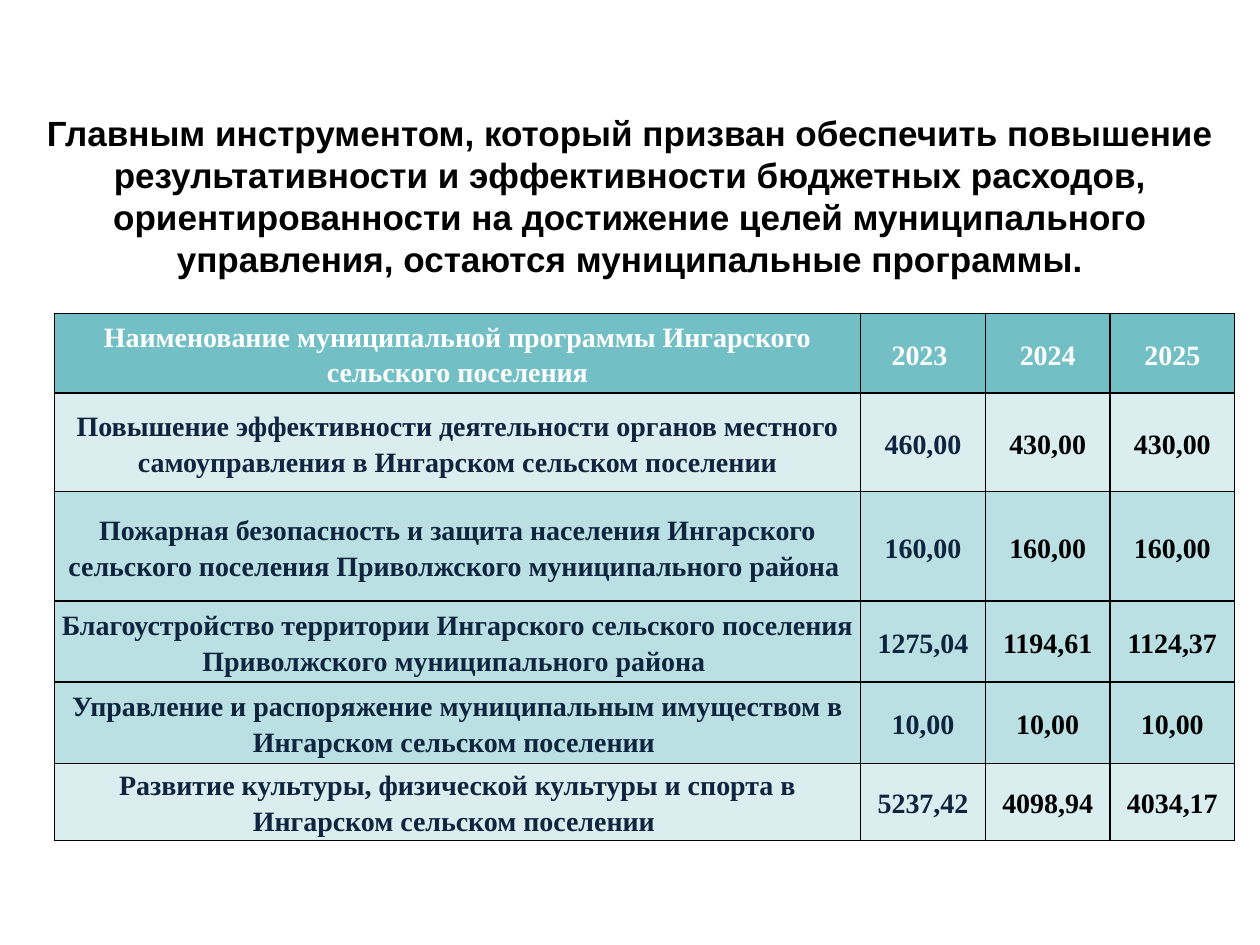
from dataclasses import dataclass

from lxml.etree import SubElement
from pptx import Presentation
from pptx.dml.color import RGBColor
from pptx.enum.text import MSO_ANCHOR, PP_ALIGN
from pptx.oxml.ns import qn
from pptx.util import Pt


@dataclass(frozen=True)
class Theme:
    black: str = "000000"
    white: str = "FFFFFF"
    navy: str = "0F243E"
    head: str = "72BFC5"
    pale: str = "DAEDEF"
    mid: str = "BBE0E3"
    sans: str = "Arial"
    serif: str = "Times New Roman"
    title: int = 20
    body: int = 16


THEME = Theme()
TITLE = (
    "Главным инструментом, который призван обеспечить повышение "
    "результативности и эффективности бюджетных расходов, "
    "ориентированности на достижение целей муниципального "
    "управления, остаются муниципальные программы."
)
# Row height, fill, cell texts
ROWS = [
    (45.25, THEME.head, ["Наименование муниципальной программы Ингарского сельского поселения",
                         "2023 ", "2024", "2025"]),
    (56.5, THEME.pale, ["Повышение эффективности деятельности органов местного "
                        "самоуправления в Ингарском сельском поселении",
                        "460,00", "430,00", "430,00"]),
    (62.5, THEME.mid, ["Пожарная безопасность и защита населения Ингарского "
                       "сельского поселения Приволжского муниципального района ",
                       "160,00", "160,00", "160,00"]),
    (46.25, THEME.mid, ["Благоустройство территории Ингарского сельского поселения "
                        "Приволжского муниципального района ",
                        "1275,04", "1194,61", "1124,37"]),
    (46.5, THEME.mid, ["Управление и распоряжение муниципальным имуществом в "
                       "Ингарском сельском поселении ",
                       "10,00", "10,00", "10,00"]),
    (40, THEME.pale, ["Развитие культуры, физической культуры и спорта в "
                      "Ингарском сельском поселении ",
                      "5237,42", "4098,94", "4034,17"]),
]
COLS = [460.8] + [71.25] * 3
CELL = {
    "margin_left": Pt(3.6), "margin_right": Pt(3.6),
    "margin_top": 0, "margin_bottom": 0,
    "vertical_anchor": MSO_ANCHOR.MIDDLE,
}
PARA = {"line_spacing": 1.15, "space_after": Pt(10)}


def apply(item, form):
    for name, value in form.items():
        setattr(item, name, value)


def write(frame, text, face, size, color, form):
    para = frame.paragraphs[0]
    para.text = text
    apply(para, {"alignment": PP_ALIGN.CENTER, **form})
    font = para.runs[0].font
    apply(font, {"name": face, "size": Pt(size), "bold": True})
    font.color.rgb = RGBColor.from_string(color)


def border(cell):
    """Draw a 1 pt line on all four sides; call before the cell is filled."""
    props = cell._tc.get_or_add_tcPr()
    for side in ("a:lnL", "a:lnR", "a:lnT", "a:lnB"):
        line = SubElement(props, qn(side), w=str(Pt(1)))
        fill = SubElement(line, qn("a:solidFill"))
        SubElement(fill, qn("a:srgbClr"), val=THEME.black)


def add_title(slide):
    box = slide.shapes.add_textbox(Pt(0), Pt(58), Pt(720), Pt(108))
    frame = box.text_frame
    apply(frame, {"word_wrap": True, "vertical_anchor": MSO_ANCHOR.MIDDLE})
    write(frame, TITLE, THEME.sans, THEME.title, THEME.black, {})


def ink(row, col):
    if row == 0:
        return THEME.white
    return THEME.navy if col < 2 else THEME.black


def add_grid(slide):
    high = sum(row[0] for row in ROWS)
    table = slide.shapes.add_table(
        len(ROWS), len(COLS), Pt(31), Pt(179.25), Pt(sum(COLS)), Pt(high)).table
    for col, width in zip(table.columns, COLS):
        col.width = Pt(width)
    for r, (height, fill, texts) in enumerate(ROWS):
        table.rows[r].height = Pt(height)
        for c, text in enumerate(texts):
            cell = table.cell(r, c)
            apply(cell, CELL)
            border(cell)
            cell.fill.solid()
            cell.fill.fore_color.rgb = RGBColor.from_string(fill)
            write(cell.text_frame, text, THEME.serif, THEME.body, ink(r, c), PARA)


def main():
    deck = Presentation()
    apply(deck, {"slide_width": Pt(720), "slide_height": Pt(540)})
    slide = deck.slides.add_slide(deck.slide_layouts[6])
    add_title(slide)
    add_grid(slide)
    deck.save("out.pptx")


if __name__ == "__main__":
    main()
